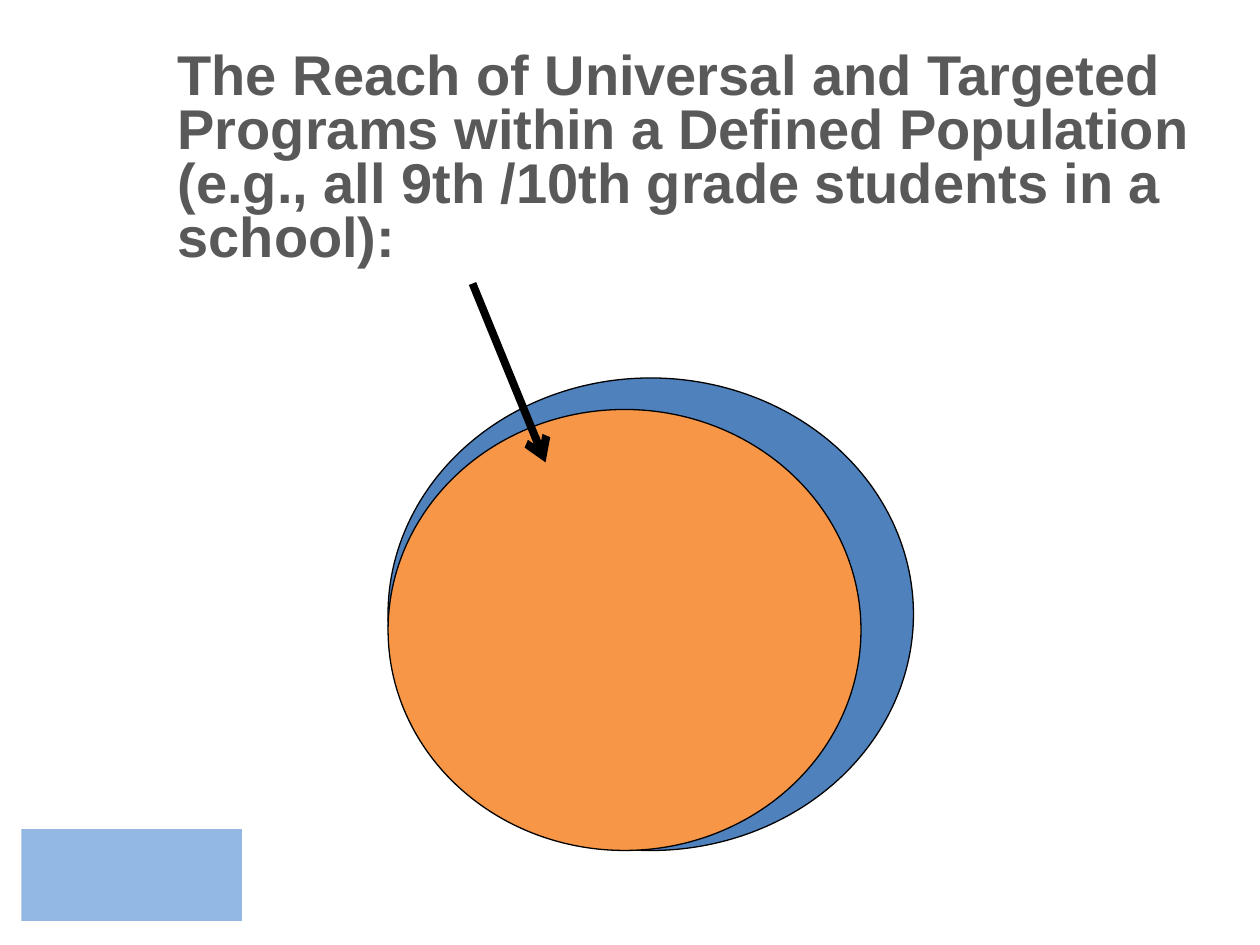
from lxml.etree import SubElement
from pptx import Presentation
from pptx.dml.color import RGBColor
from pptx.enum.shapes import MSO_CONNECTOR, MSO_SHAPE
from pptx.enum.text import MSO_ANCHOR, MSO_AUTO_SIZE, PP_ALIGN
from pptx.oxml.ns import qn
from pptx.util import Inches, Pt

COLORS = {
    "title": "595959",
    "outline": "000000",
    "population": "4F81BD",
    "reached": "F79646",
    "footer": "94B8E4",
}
TITLE = (
    "The Reach of Universal and Targeted Programs within a Defined Population "
    "(e.g., all 9th /10th grade students in a school):"
)


def color(name):
    return RGBColor.from_string(COLORS[name])


def place_title(page, left, top, width, height):
    title = page.shapes.title
    title.left, title.top = Inches(left), Inches(top)
    title.width, title.height = Inches(width), Inches(height)
    frame = title.text_frame
    frame.text = TITLE
    frame.word_wrap = True
    frame.auto_size = MSO_AUTO_SIZE.NONE
    frame.vertical_anchor = MSO_ANCHOR.TOP
    para = frame.paragraphs[0]
    para.alignment = PP_ALIGN.LEFT
    para.line_spacing = 0.8
    para.space_before = Pt(0)
    para.font.name = "Arial"
    para.font.size = Pt(32)
    para.font.bold = True
    para.font.color.rgb = color("title")


def add_filled(page, kind, fill, left, top, width, height):
    shape = page.shapes.add_shape(
        kind, Inches(left), Inches(top), Inches(width), Inches(height)
    )
    shape.shadow.inherit = False
    shape.fill.solid()
    shape.fill.fore_color.rgb = color(fill)
    shape.line.fill.background()
    return shape


def add_arrow(page, start, end):
    arrow = page.shapes.add_connector(
        MSO_CONNECTOR.STRAIGHT, *(Inches(value) for value in (*start, *end))
    )
    arrow.line.color.rgb = color("outline")
    arrow.line.width = Pt(4.5)
    properties = arrow.element.spPr
    SubElement(properties.find(qn("a:ln")), qn("a:tailEnd"), type="arrow")
    SubElement(properties, qn("a:effectLst"))


def add_reach_diagram(page, left, top, width, height):
    circles = (("population", width, height), ("reached", width * 0.9, height - 0.25))
    for name, across, down in circles:
        circle = add_filled(
            page, MSO_SHAPE.OVAL, name, left, top + height - down, across, down
        )
        circle.line.color.rgb = color("outline")
        circle.line.width = Pt(0.75)
    add_arrow(page, (left + 0.67, top - 0.75), (left + 1.25, top + 0.67))


def main():
    deck = Presentation()
    deck.slide_width, deck.slide_height = Inches(10), Inches(7.5)
    page = deck.slides.add_slide(deck.slide_layouts[5])
    place_title(page, 1.31, 0.37, 8.69, 4.95)
    add_reach_diagram(page, 3.08, 3, 4.17, 3.75)
    add_filled(page, MSO_SHAPE.RECTANGLE, "footer", 0.17, 6.58, 1.75, 0.73)
    deck.save("out.pptx")


if __name__ == "__main__":
    main()
